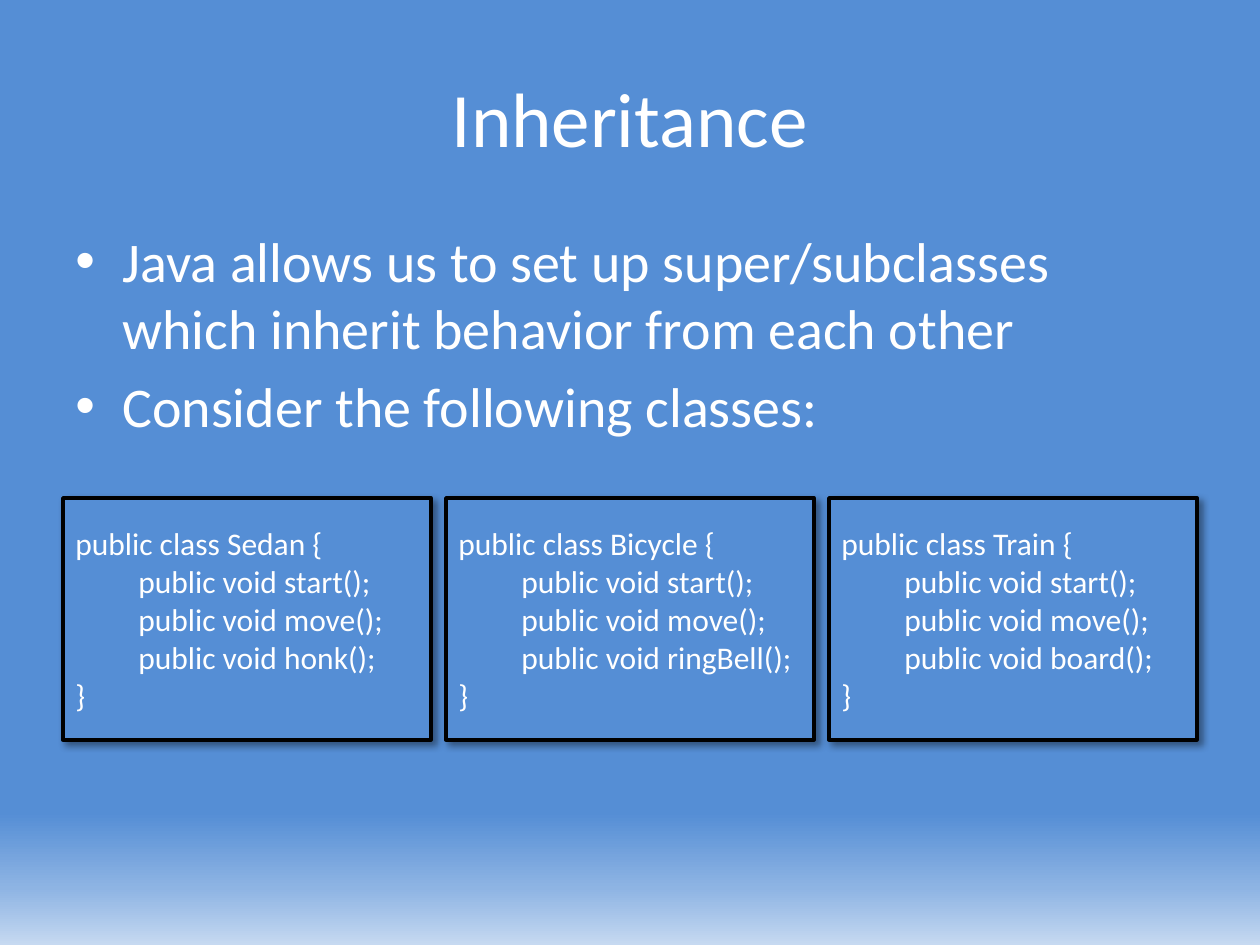
from dataclasses import dataclass

import lxml.etree
import pptx
import pptx.dml.color
import pptx.enum.shapes
import pptx.enum.text
import pptx.oxml
import pptx.oxml.ns
import pptx.util

PX = 914400 / 126
ALIGN = pptx.enum.text.PP_ALIGN
ANCHOR = pptx.enum.text.MSO_ANCHOR


@dataclass(frozen=True)
class Theme:
    font: str = "Calibri"
    text: str = "FFFFFF"
    fill: str = "558ED5"
    line: str = "000000"
    fade: tuple = ((86, "558ED5"), (94, "8EB4E3"), (100, "C6D9F1"))
    title: int = 44
    body: int = 32
    code: int = 18


@dataclass(frozen=True)
class Box:
    left: int
    top: int
    width: int
    height: int

    def emu(self) -> list:
        return [px(n) for n in (self.left, self.top, self.width, self.height)]


@dataclass(frozen=True)
class Card:
    name: str
    method: str


THEME = Theme()
TITLE = Box(63, 38, 1134, 158)
BODY = Box(63, 220, 1134, 624)
FIRST = Box(63, 498, 368, 242)
PITCH = 383
INDENT = 47
TAB = 63
POINTS = (
    "Java allows us to set up super/subclasses which inherit behavior from each other",
    "Consider the following classes:",
)
CARDS = (Card("Sedan", "honk"), Card("Bicycle", "ringBell"), Card("Train", "board"))


def px(n: int) -> int:
    return round(n * PX)


def rgb(code: str):
    return pptx.dml.color.RGBColor.from_string(code)


def add(parent, tag: str, **attrs):
    """Append a DrawingML child with the given attributes."""
    node = lxml.etree.SubElement(parent, pptx.oxml.ns.qn(f"a:{tag}"))
    for key, value in attrs.items():
        node.set(key, str(value))
    return node


def write(frame, lines, size: int, align, anchor) -> None:
    frame.word_wrap = True
    frame.vertical_anchor = anchor
    for i, line in enumerate(lines):
        para = frame.add_paragraph() if i else frame.paragraphs[0]
        para.text = line
        para.alignment = align
        para.font.name = THEME.font
        para.font.size = pptx.util.Pt(size)
        para.font.color.rgb = rgb(THEME.text)


def paint(slide) -> None:
    """Fade the background from top to bottom."""
    fill = slide.background.fill
    fill.gradient()
    fill.gradient_angle = 270
    root = slide.background._cSld.find(".//" + pptx.oxml.ns.qn("a:gsLst"))
    for stop in list(root):
        root.remove(stop)
    for place, code in THEME.fade:
        add(add(root, "gs", pos=place * 1000), "srgbClr", val=code)


def bullet(para) -> None:
    para.space_before = pptx.util.Pt(THEME.body * 0.2)
    props = para._p.get_or_add_pPr()
    props.set("marL", str(px(INDENT)))
    props.set("indent", str(-px(INDENT)))
    add(props, "buFont", typeface="Arial")
    add(props, "buChar", char="•")


def shade(shape) -> None:
    """Cast a soft shadow to the lower right."""
    shape.shadow.inherit = False
    root = shape._element.spPr.find(pptx.oxml.ns.qn("a:effectLst"))
    cast = add(root, "outerShdw", blurRad=pptx.util.Pt(4), dist=pptx.util.Pt(3),
               dir=45 * 60000, algn="tl", rotWithShape=0)
    add(add(cast, "srgbClr", val=THEME.line), "alpha", val=40000)


def draw(slide, card: Card, box: Box) -> None:
    shape = slide.shapes.add_shape(pptx.enum.shapes.MSO_SHAPE.RECTANGLE, *box.emu())
    shape.fill.solid()
    shape.fill.fore_color.rgb = rgb(THEME.fill)
    shape.line.color.rgb = rgb(THEME.line)
    shape.line.width = pptx.util.Pt(2)
    shade(shape)
    calls = [f"\tpublic void {name}();" for name in ("start", "move", card.method)]
    lines = [f"public class {card.name} {{", *calls, "}"]
    write(shape.text_frame, lines, THEME.code, ALIGN.JUSTIFY, ANCHOR.MIDDLE)
    for para in shape.text_frame.paragraphs[1:]:
        tabs = add(para._p.get_or_add_pPr(), "tabLst")
        add(tabs, "tab", pos=px(TAB), algn="l")


def main() -> None:
    deck = pptx.Presentation()
    deck.slide_width, deck.slide_height = px(1260), px(945)
    slide = deck.slides.add_slide(deck.slide_layouts[6])
    paint(slide)

    title = slide.shapes.add_textbox(*TITLE.emu()).text_frame
    write(title, ["Inheritance"], THEME.title, ALIGN.CENTER, ANCHOR.MIDDLE)

    body = slide.shapes.add_textbox(*BODY.emu()).text_frame
    write(body, POINTS, THEME.body, ALIGN.LEFT, ANCHOR.TOP)
    for para in body.paragraphs:
        bullet(para)

    for i, card in enumerate(CARDS):
        left = FIRST.left + i * PITCH
        draw(slide, card, Box(left, FIRST.top, FIRST.width, FIRST.height))

    deck.save("out.pptx")


if __name__ == "__main__":
    main()
